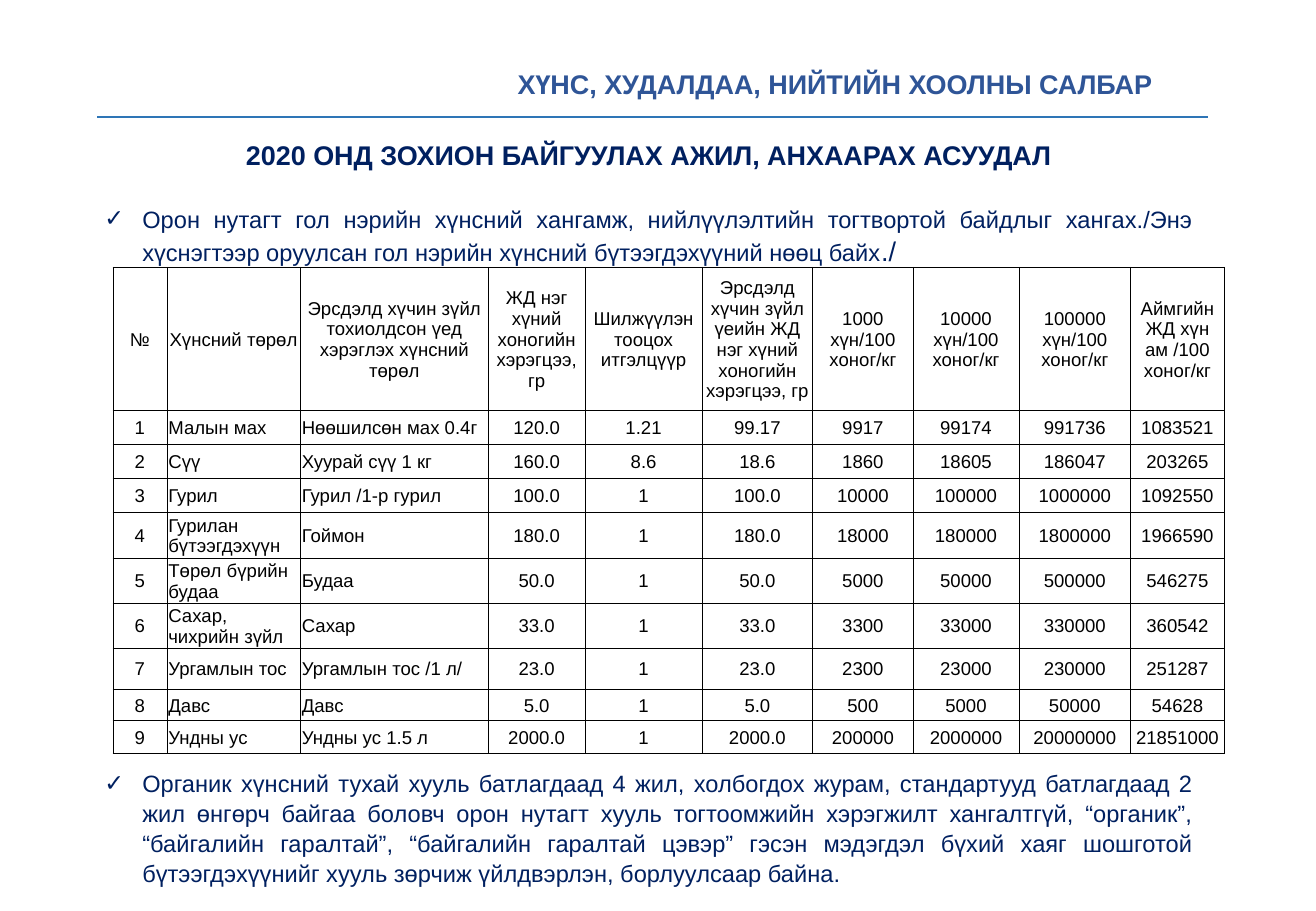
from lxml import etree
from pptx import Presentation
from pptx.dml.color import RGBColor
from pptx.enum.shapes import MSO_CONNECTOR
from pptx.enum.text import MSO_ANCHOR, MSO_AUTO_SIZE, PP_ALIGN
from pptx.oxml.ns import qn
from pptx.util import Cm, Pt

LEFT, MID, FULL = PP_ALIGN.LEFT, PP_ALIGN.CENTER, PP_ALIGN.JUSTIFY
TOP, CENTER = MSO_ANCHOR.TOP, MSO_ANCHOR.MIDDLE
STRAIGHT, FIXED = MSO_CONNECTOR.STRAIGHT, MSO_AUTO_SIZE.NONE

COLORS = {"title": "2F5597", "rule": "2E75B6", "text": "002060", "grid": "000000"}

TITLE = "ХҮНС, ХУДАЛДАА, НИЙТИЙН ХООЛНЫ САЛБАР"
HEAD = "2020 ОНД ЗОХИОН БАЙГУУЛАХ АЖИЛ, АНХААРАХ АСУУДАЛ"
SUPPLY = (
    "Орон нутагт гол нэрийн хүнсний хангамж, нийлүүлэлтийн тогтвортой байдлыг "
    "хангах./Энэ хүснэгтээр оруулсан гол нэрийн хүнсний бүтээгдэхүүний нөөц байх"
)
ORGANIC = (
    "Органик хүнсний тухай хууль батлагдаад 4 жил, холбогдох журам, стандартууд "
    "батлагдаад 2 жил өнгөрч байгаа боловч орон нутагт хууль тогтоомжийн хэрэгжилт "
    "хангалтгүй, “органик”, “байгалийн гаралтай”, “байгалийн гаралтай цэвэр” гэсэн "
    "мэдэгдэл бүхий хаяг шошготой бүтээгдэхүүнийг хууль зөрчиж үйлдвэрлэн, "
    "борлуулсаар байна."
)

WIDTHS = [1.13, 2.79, 3.93, 2.02, 2.45, 2.31, 2.1, 2.21, 2.34, 1.95]
HEIGHTS = [3, 0.71, 0.71, 0.71, 0.95, 0.94, 0.95, 0.85, 0.66, 0.68]
FOODS = [
    ["№", "Хүнсний төрөл", "Эрсдэлд хүчин зүйл тохиолдсон үед хэрэглэх хүнсний төрөл",
     "ЖД нэг хүний хоногийн хэрэгцээ, гр", "Шилжүүлэн тооцох итгэлцүүр",
     "Эрсдэлд хүчин зүйл үеийн ЖД нэг хүний хоногийн хэрэгцээ, гр",
     "1000 хүн/100 хоног/кг", "10000 хүн/100 хоног/кг", "100000 хүн/100 хоног/кг",
     "Аймгийн ЖД хүн ам /100 хоног/кг"],
    ["1", "Малын мах", "Нөөшилсөн мах 0.4г", "120.0", "1.21", "99.17",
     "9917", "99174", "991736", "1083521"],
    ["2", "Сүү", "Хуурай сүү 1 кг", "160.0", "8.6", "18.6",
     "1860", "18605", "186047", "203265"],
    ["3", "Гурил", "Гурил /1-р гурил", "100.0", "1", "100.0",
     "10000", "100000", "1000000", "1092550"],
    ["4", "Гурилан бүтээгдэхүүн", "Гоймон", "180.0", "1", "180.0",
     "18000", "180000", "1800000", "1966590"],
    ["5", "Төрөл бүрийн будаа", "Будаа", "50.0", "1", "50.0",
     "5000", "50000", "500000", "546275"],
    ["6", "Сахар, чихрийн зүйл", "Сахар", "33.0", "1", "33.0",
     "3300", "33000", "330000", "360542"],
    ["7", "Ургамлын тос", "Ургамлын тос /1 л/", "23.0", "1", "23.0",
     "2300", "23000", "230000", "251287"],
    ["8", "Давс", "Давс", "5.0", "1", "5.0", "500", "5000", "50000", "54628"],
    ["9", "Ундны ус", "Ундны ус 1.5 л", "2000.0", "1", "2000.0",
     "200000", "2000000", "20000000", "21851000"],
]


class Page:
    """Holds the style and the current slide."""

    def __init__(self, deck, font):
        self.font = font
        self.slide = deck.slides.add_slide(deck.slide_layouts[1])

    def style(self, para, size, color, bold=False, align=LEFT):
        para.alignment = align
        for run in para.runs:
            font = run.font
            font.name, font.size, font.bold = self.font, Pt(size), bold
            font.color.rgb = RGBColor.from_string(COLORS[color])

    def place(self, shape, box, anchor):
        shape.left, shape.top, shape.width, shape.height = map(Cm, box)
        frame = shape.text_frame
        frame.word_wrap, frame.auto_size = True, FIXED
        frame.vertical_anchor = anchor
        return frame

    def title(self, text, box):
        frame = self.place(self.slide.shapes.title, box, CENTER)
        frame.margin_left = frame.margin_right = Cm(0.2)
        frame.margin_top = frame.margin_bottom = Cm(0.1)
        frame.text = text
        para = frame.paragraphs[0]
        para.line_spacing = 0.9
        self.style(para, 16, "title", True)

    def body(self, box):
        return self.place(self.slide.placeholders[1], box, TOP)

    def head(self, frame, text):
        frame.text = text
        para = frame.paragraphs[0]
        self.style(para, 16, "text", True, MID)
        self.space(para, 0)
        props = para._p.get_or_add_pPr()
        props.set("marL", "0")
        props.set("indent", "0")
        etree.SubElement(props, qn("a:buNone"))

    def space(self, para, gap):
        para.line_spacing = 1.05
        para.space_before, para.space_after = Pt(gap), Pt(0)

    def item(self, frame, text, gap, tail=""):
        para = frame.add_paragraph()
        para.text = text
        self.style(para, 14, "text", align=FULL)
        if tail:
            run = para.add_run()
            run.text = tail
            self.style(para, 14, "text", align=FULL)
            run.font.size = Pt(16)
        self.space(para, gap)
        props = para._p.get_or_add_pPr()
        props.set("marL", str(Cm(0.79)))
        props.set("indent", str(Cm(-0.79)))
        etree.SubElement(props, qn("a:buFont"), typeface=self.font)
        etree.SubElement(props, qn("a:buChar"), char="✓")

    def rule(self, left, right, top):
        line = self.slide.shapes.add_connector(
            STRAIGHT, Cm(left), Cm(top), Cm(right), Cm(top))
        line.line.color.rgb = RGBColor.from_string(COLORS["rule"])
        line.line.width = Pt(1)
        etree.SubElement(line._element.spPr, qn("a:effectLst"))

    def edge(self, cell):
        props = cell._tc.get_or_add_tcPr()
        for side in ("lnL", "lnR", "lnT", "lnB"):
            line = etree.SubElement(props, qn("a:" + side), w=str(Pt(0.5)))
            fill = etree.SubElement(line, qn("a:solidFill"))
            etree.SubElement(fill, qn("a:srgbClr"), val=COLORS["grid"])

    def cell(self, cell, text, align):
        cell.text = text
        cell.vertical_anchor = CENTER
        cell.margin_left = cell.margin_right = cell.margin_top = Cm(0.03)
        cell.margin_bottom = Cm(0)
        self.style(cell.text_frame.paragraphs[0], 11, "grid", align=align)
        self.edge(cell)
        cell.fill.background()

    def table(self, rows, left, top):
        grid = self.slide.shapes.add_table(
            len(rows), len(WIDTHS), Cm(left), Cm(top),
            Cm(sum(WIDTHS)), Cm(sum(HEIGHTS))).table
        grid.first_row = grid.horz_banding = False
        for col, width in zip(grid.columns, WIDTHS):
            col.width = Cm(width)
        for r, (row, height) in enumerate(zip(rows, HEIGHTS)):
            grid.rows[r].height = Cm(height)
            for c, text in enumerate(row):
                self.cell(grid.cell(r, c), text, LEFT if r and c in (1, 2) else MID)


def main():
    deck = Presentation()
    deck.slide_width, deck.slide_height = Cm(27.51), Cm(19.05)
    page = Page(deck, "Arial")
    page.title(TITLE, (10.62, 1.14, 15.72, 1.32))
    page.rule(2.03, 25.25, 2.44)
    frame = page.body((1.93, 2.74, 23.27, 15.9))
    page.head(frame, HEAD)
    page.item(frame, SUPPLY, 19, "./")
    page.item(frame, ORGANIC, 297)
    page.table(FOODS, 2.36, 5.59)
    deck.save("out.pptx")


if __name__ == "__main__":
    main()
